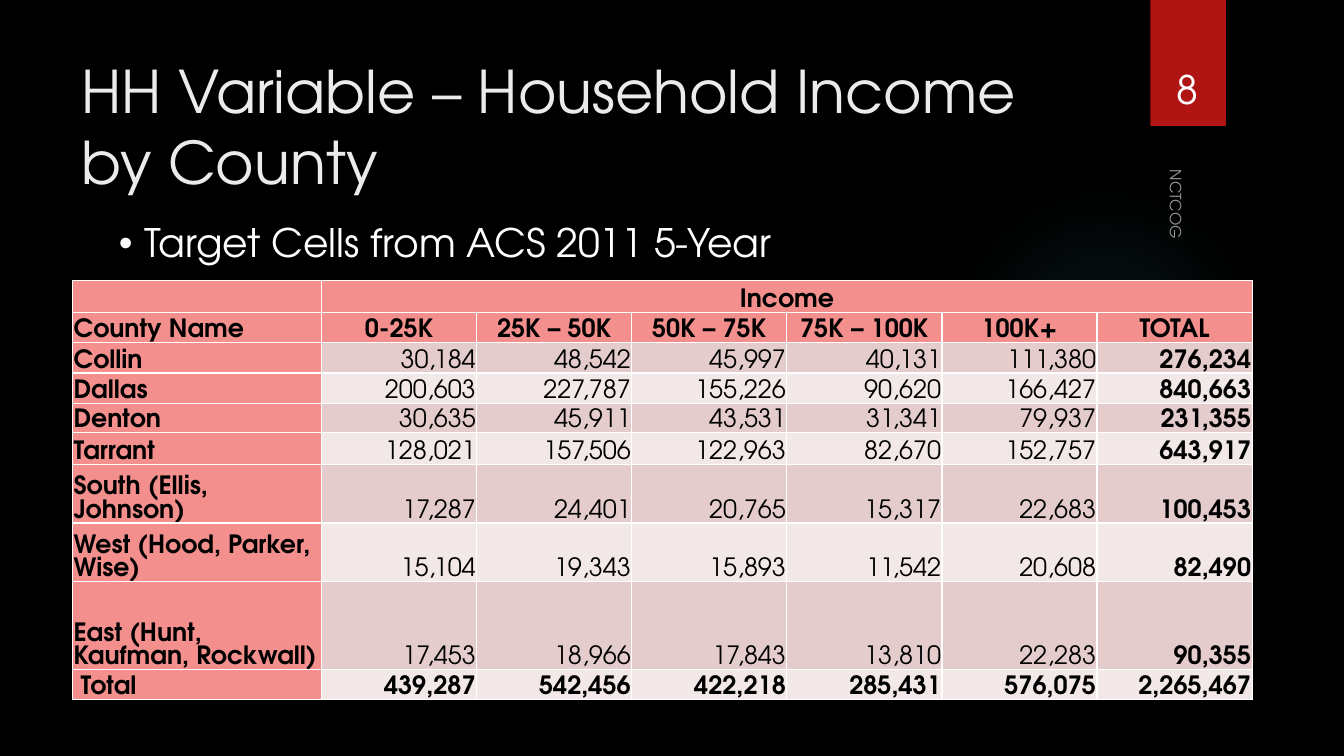
"""Build the slide on household income by county."""
import pptx
import pptx.dml.color
import pptx.enum.shapes
import pptx.enum.text
import pptx.oxml
import pptx.oxml.ns
import pptx.util
from pptx.util import Inches

RGBColor = pptx.dml.color.RGBColor
BLACK = RGBColor(0x00, 0x00, 0x00)
WHITE = RGBColor(0xFF, 0xFF, 0xFF)
TITLE_GREY = RGBColor(0xEB, 0xEB, 0xEB)
FOOTER_GREY = RGBColor(0x99, 0x99, 0x99)
RED = RGBColor(0xB0, 0x15, 0x13)
HEADER_PINK = RGBColor(0xF3, 0x8F, 0x8D)
BAND_DARK = RGBColor(0xE4, 0xCC, 0xCC)
BAND_LIGHT = RGBColor(0xF2, 0xE8, 0xE7)
GLOW_TEAL = RGBColor(0x50, 0xB9, 0xC1)
FONT = "TeX Gyre Adventor"
ALIGN = pptx.enum.text.PP_ALIGN
ANCHOR = pptx.enum.text.MSO_ANCHOR
SHAPE = pptx.enum.shapes.MSO_SHAPE
NAMESPACE = pptx.oxml.ns.nsdecls("a")


def write(frame, text, size, color, bold=False, align=ALIGN.LEFT,
          anchor=ANCHOR.TOP, spacing=None):
    frame.word_wrap = True
    frame.vertical_anchor = anchor
    paragraph = frame.paragraphs[0]
    paragraph.text = text
    paragraph.alignment = align
    paragraph.line_spacing = spacing
    paragraph.space_before = pptx.util.Pt(0)
    for font in (paragraph.font, paragraph.runs[0].font):
        font.name = FONT
        font.size = pptx.util.Pt(size)
        font.bold = bold
        font.color.rgb = color


def place(shape, left, top, width, height):
    shape.left, shape.top = Inches(left), Inches(top)
    shape.width, shape.height = Inches(width), Inches(height)


deck = pptx.Presentation()
deck.slide_width, deck.slide_height = Inches(13.33), Inches(7.5)
slide = deck.slides.add_slide(deck.slide_layouts[1])
slide.background.fill.solid()
slide.background.fill.fore_color.rgb = BLACK

glow = slide.shapes.add_shape(
    SHAPE.OVAL, Inches(9.41), Inches(1.83), Inches(3.08), Inches(3.08))
glow.shadow.inherit = False
glow.line.fill.background()
stops = "".join(
    f'<a:gs pos="{position}000"><a:srgbClr val="{GLOW_TEAL}">'
    f'<a:alpha val="{alpha}000"/></a:srgbClr></a:gs>'
    for position, alpha in ((0, 7), (36, 6), (69, 0), (100, 0)))
gradient = pptx.oxml.parse_xml(
    f'<a:gradFill {NAMESPACE}><a:gsLst>{stops}</a:gsLst><a:path path="circle">'
    '<a:fillToRect l="50000" t="50000" r="50000" b="50000"/></a:path></a:gradFill>')
glow.element.spPr.find(pptx.oxml.ns.qn("a:prstGeom")).addnext(gradient)

number_tab = slide.shapes.add_shape(
    SHAPE.RECTANGLE, Inches(11.41), 0, Inches(0.75), Inches(1.25))
number_tab.shadow.inherit = False
number_tab.fill.solid()
number_tab.fill.fore_color.rgb = RED
number_tab.line.fill.background()

title = slide.shapes.title
place(title, 0.71, 0.48, 10.28, 1.53)
title.text_frame.auto_size = pptx.enum.text.MSO_AUTO_SIZE.NONE
write(title.text_frame, "HH Variable – Household Income by County", 42, TITLE_GREY,
      anchor=ANCHOR.MIDDLE)

source_note = slide.placeholders[1]
place(source_note, 1.08, 2.17, 11.5, 4.76)
source_note.text_frame.auto_size = pptx.enum.text.MSO_AUTO_SIZE.NONE
bullet_format = source_note.text_frame.paragraphs[0]._p.get_or_add_pPr()
bullet_format.set("marL", str(Inches(0.25)))
bullet_format.set("indent", str(Inches(-0.25)))
bullet_format.append(pptx.oxml.parse_xml(f'<a:buChar {NAMESPACE} char="•"/>'))
write(source_note.text_frame, "Target Cells from ACS 2011 5-Year", 28, WHITE, spacing=0.9)

income_rows = [
    ["", "Income", "", "", "", "", ""],
    ["County Name", "0-25K", "25K – 50K", "50K – 75K", "75K – 100K", "100K+", "TOTAL"],
    ["Collin", "30,184", "48,542", "45,997", "40,131", "111,380", "276,234"],
    ["Dallas", "200,603", "227,787", "155,226", "90,620", "166,427", "840,663"],
    ["Denton", "30,635", "45,911", "43,531", "31,341", "79,937", "231,355"],
    ["Tarrant", "128,021", "157,506", "122,963", "82,670", "152,757", "643,917"],
    ["South (Ellis, Johnson)", "17,287", "24,401", "20,765", "15,317", "22,683", "100,453"],
    ["West (Hood, Parker, Wise)", "15,104", "19,343", "15,893", "11,542", "20,608", "82,490"],
    ["East (Hunt, Kaufman, Rockwall)", "17,453", "18,966", "17,843", "13,810", "22,283",
     "90,355"],
    [" Total", "439,287", "542,456", "422,218", "285,431", "576,075", "2,265,467"],
]
row_heights = [0.32, 0.3, 0.3, 0.3, 0.29, 0.32, 0.58, 0.58, 0.87, 0.3]
column_widths = [2.47] + [9.23 / 6] * 6
last_row, last_column = len(row_heights) - 1, len(column_widths) - 1
income = slide.shapes.add_table(
    len(row_heights), len(column_widths), Inches(0.72), Inches(2.78),
    Inches(sum(column_widths)), Inches(sum(row_heights))).table
for column, width in zip(income.columns, column_widths):
    column.width = Inches(width)
for row, height in zip(income.rows, row_heights):
    row.height = Inches(height)

for r, values in enumerate(income_rows):
    for c, value in enumerate(values):
        cell = income.cell(r, c)
        cell.margin_left = cell.margin_right = cell.margin_top = Inches(0.01)
        cell.margin_bottom = 0
        cell.vertical_anchor = ANCHOR.BOTTOM
        for side in ("lnL", "lnR", "lnT", "lnB"):
            cell._tc.get_or_add_tcPr().append(pptx.oxml.parse_xml(
                f'<a:{side} {NAMESPACE} w="12700"><a:solidFill>'
                f'<a:srgbClr val="{WHITE}"/></a:solidFill></a:{side}>'))
        is_header = r < 2 or c == 0
        cell.fill.solid()
        cell.fill.fore_color.rgb = (
            HEADER_PINK if is_header else BAND_LIGHT if r % 2 else BAND_DARK)
        if value:
            write(cell.text_frame, value, 18, BLACK,
                  bold=is_header or r == last_row or c == last_column,
                  align=ALIGN.LEFT if c == 0 else ALIGN.CENTER if r < 2 else ALIGN.RIGHT,
                  anchor=ANCHOR.BOTTOM)
income.cell(0, 1).merge(income.cell(0, last_column))

organization = slide.shapes.add_textbox(Inches(11.1), Inches(1.96), Inches(1.08), Inches(0.33))
organization.rotation = 90
write(organization.text_frame, "NCTCOG", 11, FOOTER_GREY)

slide_number = slide.shapes.add_textbox(
    Inches(11.32), Inches(0.32), Inches(0.92), Inches(0.84))
write(slide_number.text_frame, "8", 28, WHITE, align=ALIGN.CENTER, anchor=ANCHOR.BOTTOM)

deck.save("out.pptx")
